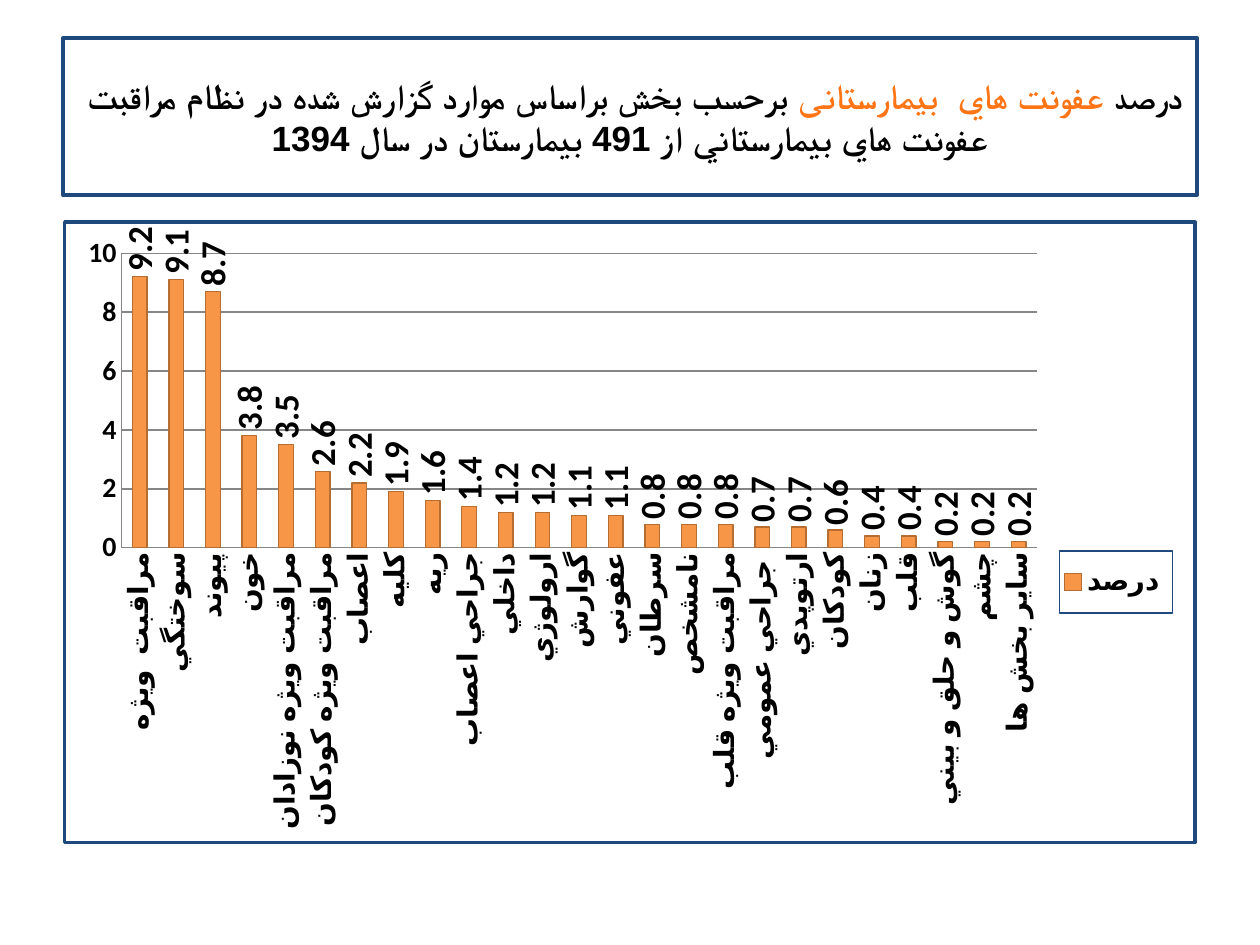
from dataclasses import dataclass

from lxml import etree
from pptx import Presentation
from pptx.chart.data import CategoryChartData
from pptx.dml.color import RGBColor
from pptx.enum.chart import XL_CHART_TYPE, XL_LABEL_POSITION, XL_LEGEND_POSITION, XL_TICK_MARK
from pptx.enum.text import MSO_ANCHOR, PP_ALIGN
from pptx.oxml import parse_xml
from pptx.oxml.ns import nsdecls, qn
from pptx.util import Inches, Pt

COLUMN = XL_CHART_TYPE.COLUMN_CLUSTERED
OUTSIDE = XL_LABEL_POSITION.OUTSIDE_END
RIGHT = XL_LEGEND_POSITION.RIGHT
NO_TICK = XL_TICK_MARK.NONE
CENTER = PP_ALIGN.CENTER
MIDDLE = MSO_ANCHOR.MIDDLE


@dataclass(frozen=True)
class Theme:
    text: str = "000000"
    accent: str = "FF7415"
    frame: str = "1F497D"
    bar: str = "F79646"
    bar_edge: str = "B66D31"
    grid: str = "868686"
    latin: str = "Calibri"
    arabic: str = "Arial"
    title_size: int = 20
    label_size: int = 20
    axis_size: int = 16
    frame_width: int = 2


THEME = Theme()

TITLE_RUNS = [
    ("درصد ", THEME.text),
    ("عفونت هاي  بیمارستانی ", THEME.accent),
    ("برحسب بخش براساس موارد گزارش شده در نظام مراقبت ", THEME.text),
    None,  # line break
    ("عفونت هاي بيمارستاني از 491 بيمارستان در سال 1394", THEME.text),
]

SERIES_NAME = "درصد "
WARDS = [
    ("مراقبت  ويژه", 9.2), ("سوختگي", 9.1), ("پيوند", 8.7), ("خون", 3.8),
    ("مراقبت ويژه نوزادان", 3.5), ("مراقبت ويژه كودكان", 2.6), ("اعصاب", 2.2),
    ("كليه", 1.9), ("ريه", 1.6), ("جراحي اعصاب", 1.4), ("داخلي", 1.2),
    ("ارولوژي", 1.2), ("گوارش", 1.1), ("عفوني", 1.1), ("سرطان", 0.8),
    ("نامشخص", 0.8), ("مراقبت ويژه قلب", 0.8), (" جراحي عمومي ", 0.7),
    ("ارتوپدي", 0.7), ("كودكان", 0.6), ("زنان", 0.4), ("قلب", 0.4),
    ("گوش و حلق و بيني", 0.2), ("چشم", 0.2), ("ساير بخش ها", 0.2),
]


def set_font(font, size, name, color=THEME.text):
    font.size, font.bold, font.name = Pt(size), True, name
    font.color.rgb = RGBColor.from_string(color)


def set_line(line, color, width):
    line.color.rgb = RGBColor.from_string(color)
    line.width = Pt(width)


def rotate_text(txpr):
    body = txpr.find(qn("a:bodyPr"))
    body.set("rot", "-5400000")
    body.set("vert", "horz")


def outline_xml(width):
    return parse_xml(
        f'<c:spPr {nsdecls("c", "a")}><a:noFill/><a:ln w="{Pt(width)}"><a:solidFill>'
        f'<a:srgbClr val="{THEME.frame}"/></a:solidFill></a:ln></c:spPr>')


def layout_xml(x, y, w, h, inner=False):
    """Manual layout in fractions of the chart box."""
    target = '<c:layoutTarget val="inner"/>' if inner else ""
    return parse_xml(
        f'<c:layout {nsdecls("c")}><c:manualLayout>{target}'
        f'<c:xMode val="edge"/><c:yMode val="edge"/><c:x val="{x}"/><c:y val="{y}"/>'
        f'<c:w val="{w}"/><c:h val="{h}"/></c:manualLayout></c:layout>')


def replace_layout(parent, layout, index):
    old = parent.find(qn("c:layout"))
    if old is not None:
        parent.remove(old)
    parent.insert(index, layout)


def add_title(slide, x, y, w, h):
    box = slide.shapes.add_textbox(x, y, w, h)
    set_line(box.line, THEME.frame, THEME.frame_width)
    tf = box.text_frame
    tf.word_wrap = True
    tf.vertical_anchor = MIDDLE
    p = tf.paragraphs[0]
    p.alignment = CENTER
    p._p.get_or_add_pPr().set("rtl", "1")
    for item in TITLE_RUNS:
        if item is None:
            p.add_line_break()
            continue
        r = p.add_run()
        r.text, color = item
        set_font(r.font, THEME.title_size, THEME.latin, color)
        # Complex-script face for the Persian text
        cs = etree.SubElement(r.font._element, qn("a:cs"))
        cs.set("typeface", THEME.arabic)


def add_ward_chart(slide, x, y, w, h):
    data = CategoryChartData(number_format="0.0")
    data.categories = [ward for ward, _ in WARDS]
    data.add_series(SERIES_NAME, [value for _, value in WARDS])
    chart = slide.shapes.add_chart(COLUMN, x, y, w, h, data).chart
    chart.has_title = False
    chart.font.size, chart.font.name = Pt(10), THEME.arabic

    # Bars and their labels
    plot = chart.plots[0]
    plot.gap_width = 150
    plot.vary_by_categories = False
    bars = plot.series[0].format
    bars.fill.solid()
    bars.fill.fore_color.rgb = RGBColor.from_string(THEME.bar)
    set_line(bars.line, THEME.bar_edge, 0.75)
    plot.has_data_labels = True
    labels = plot.data_labels
    labels.show_value = True
    labels.number_format, labels.number_format_is_linked = "0.0", False
    labels.position = OUTSIDE
    set_font(labels.font, THEME.label_size, THEME.latin)
    rotate_text(labels._element.find(qn("c:txPr")))

    # Axes
    cat, val = chart.category_axis, chart.value_axis
    for axis, face in ((cat, THEME.arabic), (val, THEME.latin)):
        axis.major_tick_mark = axis.minor_tick_mark = NO_TICK
        set_font(axis.tick_labels.font, THEME.axis_size, face)
        set_line(axis.format.line, THEME.grid, 0.75)
    rotate_text(cat._element.find(qn("c:txPr")))
    val.minimum_scale, val.maximum_scale, val.major_unit = 0, 10, 2
    val.tick_labels.number_format = "0"
    val.tick_labels.number_format_is_linked = False
    val.has_major_gridlines = True
    set_line(val.major_gridlines.format.line, THEME.grid, 0.75)

    # Legend
    chart.has_legend = True
    legend = chart.legend
    legend.position = RIGHT
    legend.include_in_layout = False
    set_font(legend.font, THEME.axis_size, THEME.arabic)
    legend._element.find(qn("c:txPr")).addprevious(outline_xml(0.75))
    replace_layout(legend._element, layout_xml(0.88, 0.53, 0.1, 0.1), 1)

    # Plot placement and outer frame
    space = chart._chartSpace
    replace_layout(space.chart.plotArea, layout_xml(0.05, 0.05, 0.81, 0.475, True), 0)
    space.chart.addnext(outline_xml(THEME.frame_width))


def main():
    prs = Presentation()
    prs.slide_width, prs.slide_height = Inches(10), Inches(7.5)
    slide = prs.slides.add_slide(prs.slide_layouts[6])
    left, width = Inches(0.5), Inches(9)
    add_title(slide, left, Inches(0.3), width, Inches(1.25))
    add_ward_chart(slide, left, Inches(1.75), width, Inches(4.95))
    prs.save("out.pptx")


if __name__ == "__main__":
    main()
